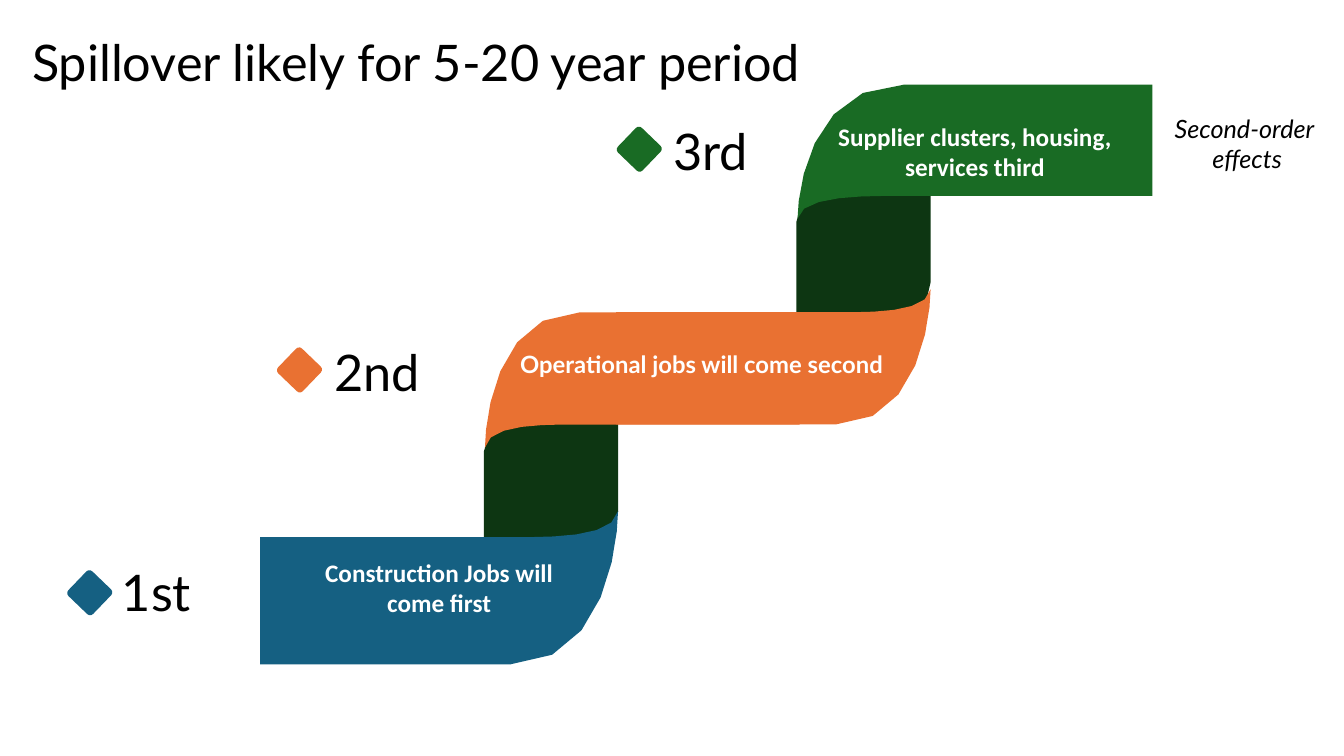
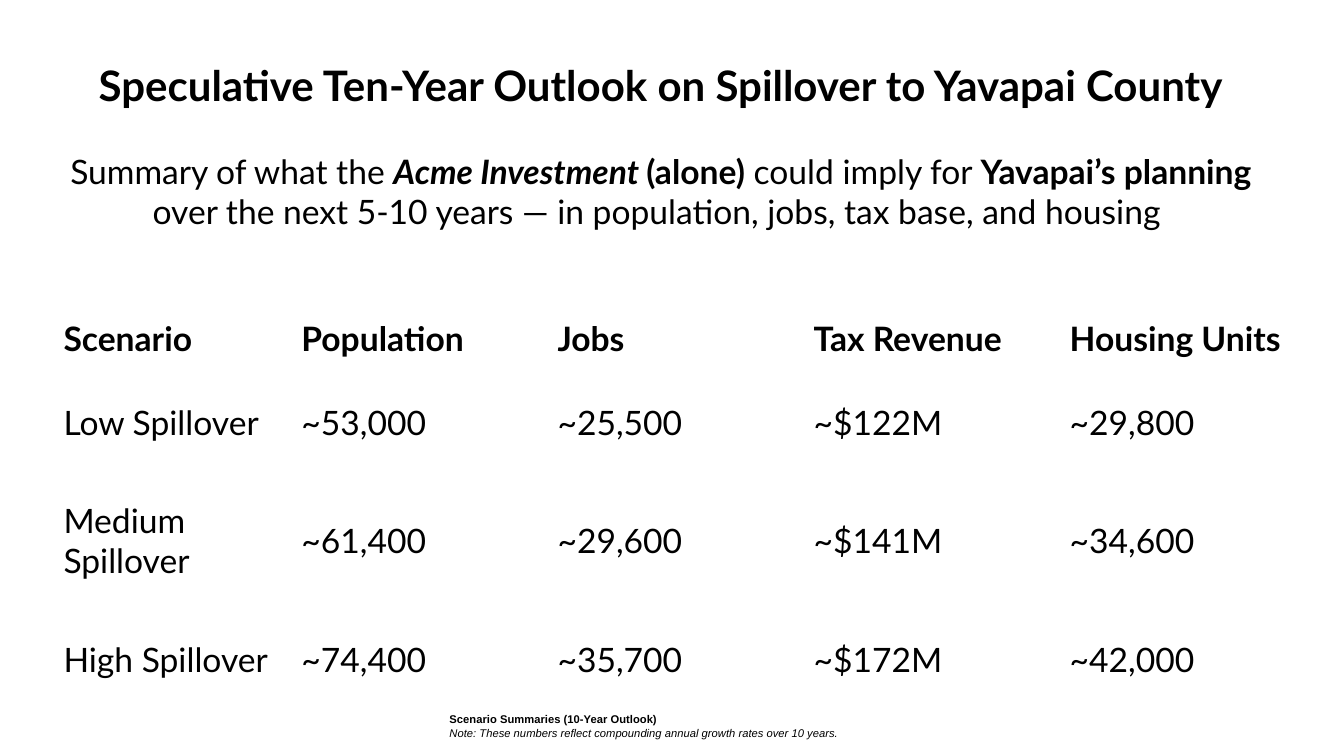
"""Build two slides on economic spillover: a stepped ribbon and a scenario table."""
from pptx import Presentation
from pptx.dml.color import RGBColor
from pptx.enum.shapes import MSO_SHAPE as Preset
from pptx.enum.text import MSO_ANCHOR as Anchor, PP_ALIGN as Align
from pptx.util import Inches, Pt

BLACK = RGBColor(0x00, 0x00, 0x00)
WHITE = RGBColor(0xFF, 0xFF, 0xFF)
BLUE = RGBColor(0x15, 0x60, 0x82)
ORANGE = RGBColor(0xE9, 0x71, 0x32)
GREEN = RGBColor(0x19, 0x6B, 0x24)
DARK_GREEN = RGBColor(0x0D, 0x36, 0x12)

TITLE = "Spillover likely for 5-20 year period"
SECOND_STEP = "Operational jobs will come second"
SIDE_NOTE = ["Second-order ", "effects"]

# Outlines are shares of a box: two numbers make a line, six make a curve.
BAND = [(0.3, 0), (1, 0), (1, 0.83), (0.3, 0.83),
        (0.2, 0.83, 0.01, 0.82, 0, 1), (0, 0.83, 0.03, 0, 0.3, 0)]
FOLD = [(0.31, 0.98), (0, 0.98), (0, 0.31), (0.05, 0, 0.47, 0.01, 0.69, 0.01),
        (1, 0.01), (1, 0.64), (0.97, 0.99, 0.53, 0.98, 0.31, 0.98)]
RIBBON = [
    (FOLD, (7.9, 1.63, 1.33, 1.83), False, DARK_GREEN, []),
    (FOLD, (4.8, 3.91, 1.33, 1.83), False, DARK_GREEN, []),
    (BAND, (2.58, 5.07, 3.55, 1.52), True, BLUE,
     ["Construction Jobs will", "come first"]),
    (BAND, (4.81, 3.1, 3.12, 1.34), False, ORANGE, []),
    (BAND, (6.11, 2.87, 3.12, 1.34), True, ORANGE, []),
    (BAND, (7.91, 0.84, 3.52, 1.33), False, GREEN,
     ["Supplier clusters, housing, services third"]),
]
MARKER_SIZE = 0.34
MARKERS = [
    ("1st", BLUE, (0.72, 5.71), (1.11, 5.52)),
    ("2nd", ORANGE, (2.8, 3.5), (3.22, 3.33)),
    ("3rd", GREEN, (6.17, 1.31), (6.58, 1.14)),
]

OUTLOOK_TITLE = "Speculative Ten-Year Outlook on Spillover to Yavapai County"
OUTLOOK_SUMMARY = [
    ("Summary of what the ", ""), ("Acme Investment ", "bi"), ("(alone)", "b"),
    (" could imply for ", ""), ("Yavapai’s planning", "b"),
    (" over the next 5-10 years — in population, jobs, tax base, and housing ", ""),
]
FOOTNOTE = [
    [("Scenario Summaries (10-Year Outlook)", "b")],
    [("Note: These numbers reflect compounding annual growth rates over 10 years.", "i")],
]
SCENARIOS = [
    ["Scenario", "Population", "Jobs", "Tax Revenue", "Housing Units"],
    ["Low Spillover", "~53,000", "~25,500", "~$122M", "~29,800"],
    ["Medium Spillover", "~61,400", "~29,600", "~$141M", "~34,600"],
    ["High Spillover", "~74,400", "~35,700", "~$172M", "~42,000"],
]
COLUMN_WIDTHS = [2.36] + [2.54] * 4
ROW_HEIGHTS = [0.84, 0.83, 1.51, 0.84]


def write(frame, paragraphs, size=24, font="Lato", color=BLACK, style="",
          align=Align.LEFT, anchor=Anchor.TOP, line_spacing=None, before=0):
    """Write paragraphs, each a string or a list of (text, style) runs."""
    frame.word_wrap = True
    frame.vertical_anchor = anchor
    for index, runs in enumerate(paragraphs):
        paragraph = frame.paragraphs[0] if index == 0 else frame.add_paragraph()
        paragraph.alignment = align
        paragraph.line_spacing = line_spacing
        paragraph.space_before = Pt(before if index else 0)
        for text, run_style in [(runs, style)] if isinstance(runs, str) else runs:
            run = paragraph.add_run()
            run.text = text
            run.font.name = font
            run.font.size = Pt(30 if "t" in run_style else size)
            run.font.bold = "b" in run_style
            run.font.italic = "i" in run_style
            run.font.color.rgb = color


def add_text(slide, box, paragraphs, **style):
    """Add a text box."""
    shape = slide.shapes.add_textbox(*map(Inches, box))
    write(shape.text_frame, paragraphs, **style)


def paint(shape, color):
    """Give a shape a plain fill without line or shadow."""
    shape.fill.solid()
    shape.fill.fore_color.rgb = color
    shape.line.fill.background()
    shape.shadow.inherit = False


def flatten(outline, steps=6):
    """Turn lines and cubic curves into a short list of points."""
    points = [outline[0]]
    for segment in outline[1:]:
        if len(segment) == 2:
            points.append(segment)
            continue
        controls = [points[-1], segment[:2], segment[2:4], segment[4:]]
        for step in range(1, steps + 1):
            t = step / steps
            weights = ((1 - t) ** 3, 3 * t * (1 - t) ** 2, 3 * t * t * (1 - t), t ** 3)
            points.append(tuple(sum(weight * control[axis] for weight, control
                                    in zip(weights, controls)) for axis in (0, 1)))
    return points[:-1]


def add_outline(slide, outline, box, turned, color):
    """Stretch an outline over a box, turned by half a circle if asked."""
    left, top, width, height = box
    points = [(1 - x, 1 - y) if turned else (x, y) for x, y in flatten(outline)]
    corners = [(Inches(left + x * width), Inches(top + y * height)) for x, y in points]
    builder = slide.shapes.build_freeform(*corners[0], scale=1.0)
    builder.add_line_segments(corners[1:], close=True)
    shape = builder.convert_to_shape()
    paint(shape, color)
    return shape


def build_ribbon(slide):
    """Draw the stepped ribbon with its three markers."""
    add_text(slide, (0.22, -0.08, 11.5, 1.45), [TITLE], size=36,
             anchor=Anchor.MIDDLE, line_spacing=0.9)
    for outline, box, turned, color, lines in RIBBON:
        shape = add_outline(slide, outline, box, turned, color)
        if lines:
            write(shape.text_frame, lines, size=18, font="Calibri", color=WHITE,
                  style="b", align=Align.CENTER, anchor=Anchor.MIDDLE)
    for label, color, marker_at, label_at in MARKERS:
        marker = slide.shapes.add_shape(
            Preset.ROUNDED_RECTANGLE, *map(Inches, (*marker_at, MARKER_SIZE, MARKER_SIZE)))
        marker.adjustments[0] = 0.12
        marker.rotation = 43.9
        paint(marker, color)
        add_text(slide, (*label_at, 1.09, 0.71), [label], size=36)
    add_text(slide, (5.06, 3.42, 5.75, 0.39), [SECOND_STEP], size=17,
             color=WHITE, style="b")
    add_text(slide, (11.5, 1.07, 1.74, 0.71), SIDE_NOTE, size=18, style="i",
             align=Align.CENTER)


def build_outlook(slide):
    """Draw the heading, the scenario table and its footnote."""
    add_text(slide, (4.36, 7.02, 6.67, 0.37), FOOTNOTE, size=8, font="Arial")
    add_text(slide, (0.53, 0.54, 12.05, 1.82),
             [[(OUTLOOK_TITLE, "bt")], OUTLOOK_SUMMARY], align=Align.CENTER, before=29)
    box = (0.53, 2.94, sum(COLUMN_WIDTHS), sum(ROW_HEIGHTS))
    table = slide.shapes.add_table(
        len(ROW_HEIGHTS), len(COLUMN_WIDTHS), *map(Inches, box)).table
    table.first_row = table.horz_banding = False
    for column, width in zip(table.columns, COLUMN_WIDTHS):
        column.width = Inches(width)
    for row_index, (row, height, values) in enumerate(
            zip(table.rows, ROW_HEIGHTS, SCENARIOS)):
        row.height = Inches(height)
        for cell, value in zip(row.cells, values):
            cell.fill.background()
            cell.vertical_anchor = Anchor.MIDDLE
            write(cell.text_frame, [value], style="" if row_index else "b",
                  anchor=None)


def main():
    """Build and save the presentation."""
    presentation = Presentation()
    presentation.slide_width = Inches(13.33)
    presentation.slide_height = Inches(7.5)
    for build in (build_ribbon, build_outlook):
        build(presentation.slides.add_slide(presentation.slide_layouts[6]))
    presentation.save("out.pptx")


if __name__ == "__main__":
    main()
